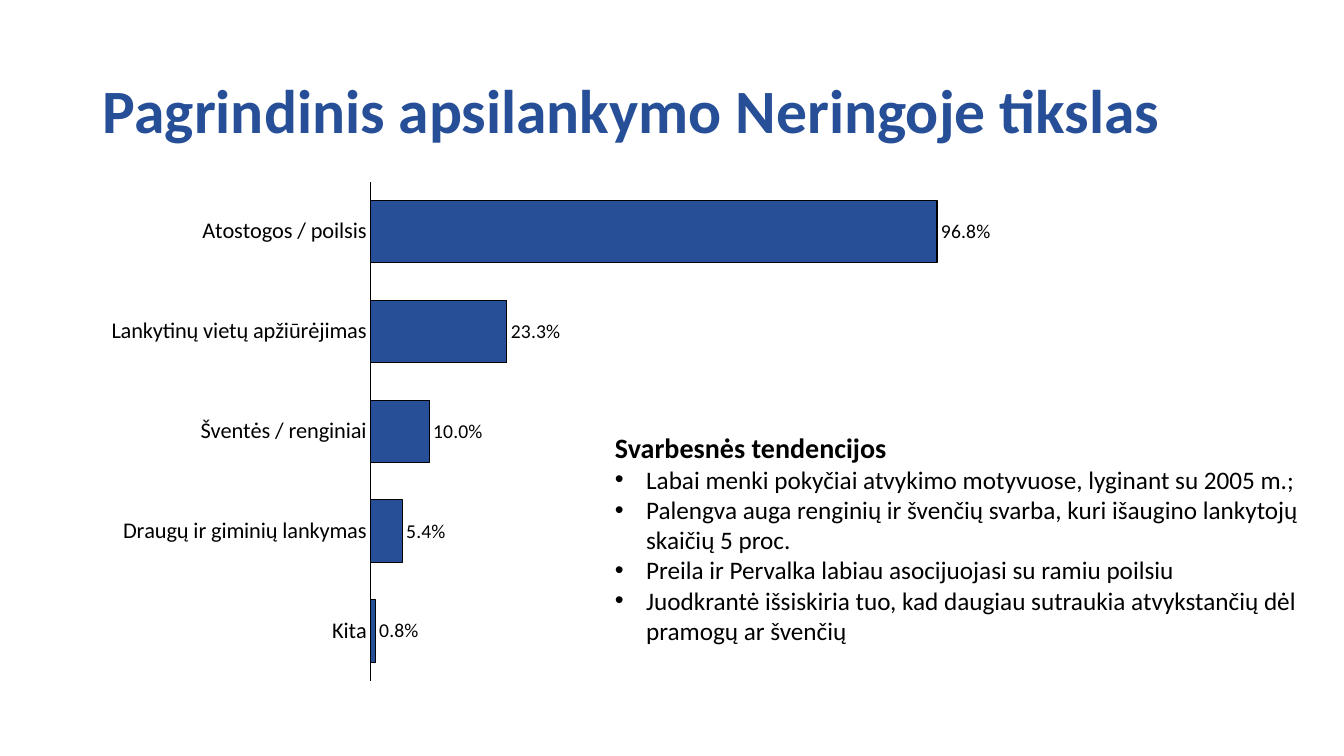
import dataclasses

import lxml.etree
import pptx
import pptx.chart.data
import pptx.dml.color
import pptx.enum.chart
import pptx.enum.text
import pptx.oxml
import pptx.oxml.ns
import pptx.util

Inches, Pt = pptx.util.Inches, pptx.util.Pt
qn = pptx.oxml.ns.qn


@dataclasses.dataclass(frozen=True)
class Theme:
    font: str = "Calibri"
    accent: str = "264F97"
    ink: str = "000000"
    title_size: float = 44
    heading_size: float = 20
    body_size: float = 18
    category_size: float = 16
    label_size: float = 14
    line_width: float = 0.75
    bullet_indent: float = 0.31


TITLE = "Pagrindinis apsilankymo Neringoje tikslas"
PURPOSES = {
    "Atostogos / poilsis": 0.968,
    "Lankytinų vietų apžiūrėjimas": 0.233,
    "Šventės / renginiai": 0.1,
    "Draugų ir giminių lankymas": 0.054,
    "Kita": 0.008,
}
HEADING = "Svarbesnės tendencijos"
TRENDS = [
    "Labai menki pokyčiai atvykimo motyvuose, lyginant su 2005 m.;",
    "Palengva auga renginių ir švenčių svarba, kuri išaugino lankytojų skaičių 5 proc.",
    "Preila ir Pervalka labiau asocijuojasi su ramiu poilsiu",
    "Juodkrantė išsiskiria tuo, kad daugiau sutraukia atvykstančių dėl pramogų ar švenčių",
]


def rgb(color):
    return pptx.dml.color.RGBColor.from_string(color)


def format_font(font, name, size, color, bold=False):
    font.name, font.size, font.bold = name, Pt(size), bold
    font.color.rgb = rgb(color)


def write(p, text, **fmt):
    """Add a run of formatted text to a paragraph."""
    r = p.add_run()
    r.text = text
    format_font(r.font, **fmt)


def add_bullet(p, indent):
    pPr = p._p.get_or_add_pPr()
    pPr.set("marL", str(Inches(indent)))
    pPr.set("indent", str(-Inches(indent)))
    lxml.etree.SubElement(pPr, qn("a:buFont"), typeface="Arial")
    lxml.etree.SubElement(pPr, qn("a:buChar"), char="•")


def set_plot_layout(chart, **fractions):
    """Fix the inner plot area as fractions of the chart's size."""
    plot_area = chart._chartSpace.chart.plotArea
    for old in plot_area.findall(qn("c:layout")):
        plot_area.remove(old)
    layout = lxml.etree.Element(qn("c:layout"))
    manual = lxml.etree.SubElement(layout, qn("c:manualLayout"))
    settings = {"layoutTarget": "inner", "xMode": "edge", "yMode": "edge", **fractions}
    for key, value in settings.items():
        lxml.etree.SubElement(manual, qn(f"c:{key}"), val=str(value))
    plot_area.insert(0, layout)


class SlideBuilder:
    def __init__(self, s, theme):
        self.s, self.theme = s, theme

    def style(self, size, color=None, bold=False):
        return dict(name=self.theme.font, size=size, color=color or self.theme.ink, bold=bold)

    def title(self, text, left, top, width, height):
        sp = self.s.shapes.title
        sp.left, sp.top, sp.width, sp.height = map(Inches, (left, top, width, height))
        tf = sp.text_frame
        tf.word_wrap = True
        tf.vertical_anchor = pptx.enum.text.MSO_ANCHOR.MIDDLE
        p = tf.paragraphs[0]
        p.alignment = pptx.enum.text.PP_ALIGN.LEFT
        p.line_spacing = 0.9
        write(p, text, **self.style(self.theme.title_size, self.theme.accent, True))

    def bar_chart(self, values, left, top, width, height):
        t = self.theme
        data = pptx.chart.data.CategoryChartData(number_format="0.0%")
        data.categories = list(values)
        data.add_series("Series 1", list(values.values()))
        chart = self.s.shapes.add_chart(
            pptx.enum.chart.XL_CHART_TYPE.BAR_CLUSTERED,
            *map(Inches, (left, top, width, height)), data).chart
        chart.has_legend = chart.has_title = False
        format_font(chart.font, **self.style(10))
        set_plot_layout(chart, x=0.277, y=0.02, w=0.7, h=0.96)

        axis = chart.category_axis
        axis.reverse_order = True
        axis.major_tick_mark = axis.minor_tick_mark = pptx.enum.chart.XL_TICK_MARK.NONE
        format_font(axis.tick_labels.font, **self.style(t.category_size))
        self.outline(axis.format.line)
        axis = chart.value_axis
        axis.minimum_scale, axis.maximum_scale = 0, 1.2
        axis.has_major_gridlines = axis.visible = False

        plot = chart.plots[0]
        plot.gap_width, plot.vary_by_categories = 60, False
        series = plot.series[0]
        series.format.fill.solid()
        series.format.fill.fore_color.rgb = rgb(t.accent)
        self.outline(series.format.line)
        labels = series.data_labels
        labels.show_value = True
        labels.number_format, labels.number_format_is_linked = "0.0%", False
        labels.position = pptx.enum.chart.XL_LABEL_POSITION.OUTSIDE_END
        format_font(labels.font, **self.style(t.label_size))

    def outline(self, line):
        line.color.rgb = rgb(self.theme.ink)
        line.width = Pt(self.theme.line_width)

    def bullet_box(self, heading, items, left, top, width, height):
        tf = self.s.shapes.add_textbox(*map(Inches, (left, top, width, height))).text_frame
        tf.word_wrap = True
        tf.auto_size = pptx.enum.text.MSO_AUTO_SIZE.SHAPE_TO_FIT_TEXT
        write(tf.paragraphs[0], heading, **self.style(self.theme.heading_size, bold=True))
        for item in items:
            p = tf.add_paragraph()
            add_bullet(p, self.theme.bullet_indent)
            write(p, item, **self.style(self.theme.body_size))


def main():
    prs = pptx.Presentation()
    prs.slide_width, prs.slide_height = Inches(13.33), Inches(7.5)
    slide = SlideBuilder(prs.slides.add_slide(prs.slide_layouts[5]), Theme())
    slide.title(TITLE, 0.92, 0.4, 11.5, 1.45)
    slide.bar_chart(PURPOSES, 0.92, 1.7, 9.95, 5.16)
    slide.bullet_box(HEADING, TRENDS, 6, 4.22, 7.05, 2.26)
    prs.save("out.pptx")


if __name__ == "__main__":
    main()
